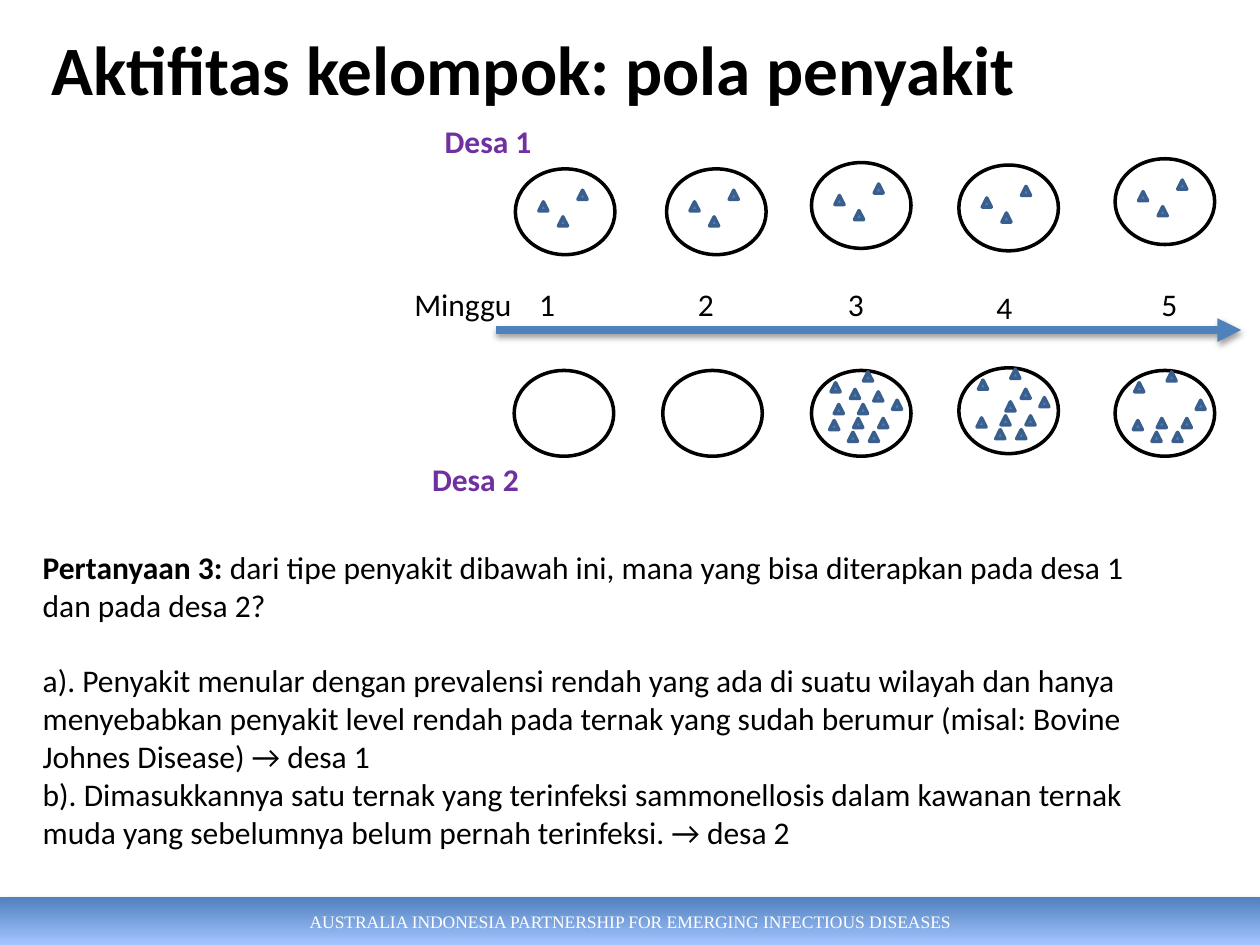
"""Build the slide on disease patterns in two villages."""
from lxml import etree
from pptx import Presentation
from pptx.dml.color import RGBColor
from pptx.enum.shapes import MSO_CONNECTOR, MSO_SHAPE
from pptx.enum.text import MSO_ANCHOR, MSO_AUTO_SIZE, PP_ALIGN
from pptx.oxml.ns import qn
from pptx.util import Pt

OVAL, TRIANGLE, RECTANGLE = MSO_SHAPE.OVAL, MSO_SHAPE.ISOSCELES_TRIANGLE, MSO_SHAPE.RECTANGLE
STRAIGHT = MSO_CONNECTOR.STRAIGHT
MIDDLE, NO_AUTOFIT = MSO_ANCHOR.MIDDLE, MSO_AUTO_SIZE.NONE
LEFT, CENTER = PP_ALIGN.LEFT, PP_ALIGN.CENTER

BLACK, WHITE, BLUE, DARK_BLUE, PURPLE = "000000", "FFFFFF", "4F81BD", "3A5F8C", "7030A0"
HERD_WIDTH, HERD_HEIGHT, CASE_SIZE = 56.9, 49, 5.2
NUMBER_WIDTH, WEEK_WIDTH, VILLAGE_WIDTH = 23.8, 72, 66

STABLE_CASES = [(13.4, 18.8), (24.6, 27.4), (35.8, 12.2)]
OUTBREAK_CASES = [
    (24.1, 27.4), (38.4, 27.4), (33.1, 35.3), (10.4, 28.6),
    (11.2, 7), (29.7, 0.8), (46.3, 17), (21.1, 35.3),
    (35.6, 12.2), (26.9, 19.4), (13, 19.4), (22.3, 10.8),
]
VILLAGE_1 = [
    (left, top, STABLE_CASES)
    for left, top in [(294.5, 96.5), (380.9, 96.5), (463.7, 92.9), (547.9, 94.3), (637.2, 90.7)]
]
VILLAGE_2 = [
    (293.8, 211.7, []),
    (378.7, 211.7, []),
    (463.7, 211.7, OUTBREAK_CASES),
    (547.9, 210.2, OUTBREAK_CASES[:10]),
    (637.2, 211.7, OUTBREAK_CASES[:8]),
]
WEEK_NUMBERS = [
    ("1", 301, 159.1), ("2", 391.7, 159.1), ("3", 477.4, 159.1),
    ("4", 562.3, 161.3), ("5", 656.6, 159.1),
]
VILLAGE_LABELS = [("Desa 1", 247, 66.2), ("Desa 2", 239.8, 259.2)]
QUESTION = (
    "Pertanyaan 3: ",
    "dari tipe penyakit dibawah ini, mana yang bisa diterapkan pada desa 1 dan pada desa 2?",
)
ANSWERS = [
    "a). Penyakit menular dengan prevalensi rendah yang ada di suatu wilayah dan hanya "
    "menyebabkan penyakit level rendah pada ternak yang sudah berumur (misal: Bovine "
    "Johnes Disease) → desa 1",
    "b). Dimasukkannya satu ternak yang terinfeksi sammonellosis dalam kawanan ternak "
    "muda yang sebelumnya belum pernah terinfeksi. → desa 2",
]


def rgb(value):
    """Return the colour for a hex string."""
    return RGBColor.from_string(value)


def format_font(font, size, color=BLACK, bold=False, name="Calibri"):
    """Set the face, size, weight and colour of a font."""
    font.name, font.size, font.bold = name, Pt(size), bold
    font.color.rgb = rgb(color)


def add_shadow(shape, opacity, distance):
    """Give a shape or connector a soft shadow straight below it."""
    effects = etree.SubElement(shape._element.spPr, qn("a:effectLst"))
    shadow = etree.SubElement(
        effects, qn("a:outerShdw"), blurRad=str(Pt(3.1)), dist=str(Pt(distance)),
        dir="5400000", rotWithShape="0",
    )
    color = etree.SubElement(shadow, qn("a:srgbClr"), val=BLACK)
    etree.SubElement(color, qn("a:alpha"), val=str(opacity * 1000))


def add_title(slide, text):
    """Place and format the slide title."""
    title = slide.shapes.title
    title.left, title.top, title.width, title.height = Pt(22.3), Pt(10.8), Pt(648), Pt(55.4)
    frame = title.text_frame
    frame.text = text
    frame.auto_size, frame.vertical_anchor = NO_AUTOFIT, MIDDLE
    frame.paragraphs[0].alignment = LEFT
    format_font(frame.paragraphs[0].runs[0].font, 39.6, bold=True)


def add_footer(slide, text):
    """Add the gradient band along the bottom edge."""
    band = slide.shapes.add_shape(RECTANGLE, 0, Pt(512.6), Pt(720), Pt(27.4))
    band.fill.gradient()
    band.fill.gradient_angle = 270
    for stop, color in zip(band.fill.gradient_stops, (BLUE, "A4C4FF")):
        stop.color.rgb = rgb(color)
    band.line.fill.background()
    add_shadow(band, 35, 1.8)
    frame = band.text_frame
    frame.text = text
    frame.vertical_anchor = MIDDLE
    frame.paragraphs[0].alignment = CENTER
    format_font(frame.paragraphs[0].runs[0].font, 10, WHITE, name="Times New Roman")


def add_label(slide, text, left, top, width, color=BLACK, bold=False):
    """Add a short one-line label."""
    box = slide.shapes.add_textbox(Pt(left), Pt(top), Pt(width), Pt(29))
    box.text_frame.word_wrap = False
    box.text_frame.text = text
    format_font(box.text_frame.paragraphs[0].runs[0].font, 18, color, bold)


def add_outlined(slide, kind, left, top, width, height, fill, line):
    """Add a filled shape with a two-point outline."""
    shape = slide.shapes.add_shape(kind, Pt(left), Pt(top), Pt(width), Pt(height))
    shape.shadow.inherit = False
    shape.fill.solid()
    shape.fill.fore_color.rgb = rgb(fill)
    shape.line.color.rgb = rgb(line)
    shape.line.width = Pt(2)


def add_herd(slide, left, top, cases):
    """Add a herd circle with its cases as triangles."""
    add_outlined(slide, OVAL, left, top, HERD_WIDTH, HERD_HEIGHT, WHITE, BLACK)
    for x, y in cases:
        add_outlined(slide, TRIANGLE, left + x, top + y, CASE_SIZE, CASE_SIZE, BLUE, DARK_BLUE)


def add_timeline(slide):
    """Add the arrow that runs through the weeks."""
    arrow = slide.shapes.add_connector(STRAIGHT, Pt(283.6), Pt(188.6), Pt(709.2), Pt(188.6))
    arrow.line.color.rgb = rgb(BLUE)
    arrow.line.width = Pt(4.5)
    etree.SubElement(arrow._element.spPr.get_or_add_ln(), qn("a:tailEnd"), type="triangle")
    add_shadow(arrow, 38, 1.6)


def add_question(slide):
    """Add the question and its two answers."""
    box = slide.shapes.add_textbox(Pt(17.3), Pt(309.6), Pt(654.5), Pt(181.4))
    frame = box.text_frame
    frame.word_wrap = True
    for index, text in enumerate(QUESTION):
        run = frame.paragraphs[0].add_run()
        run.text = text
        format_font(run.font, 18, bold=index == 0)
    for answer in ANSWERS:
        paragraph = frame.add_paragraph()
        paragraph.text = answer
        format_font(paragraph.runs[0].font, 18)
    frame.paragraphs[1].space_before = Pt(21.6)


def main():
    """Build and save the presentation."""
    presentation = Presentation()
    presentation.slide_width, presentation.slide_height = Pt(720), Pt(540)
    slide = presentation.slides.add_slide(presentation.slide_layouts[5])
    add_footer(slide, "AUSTRALIA INDONESIA PARTNERSHIP FOR EMERGING INFECTIOUS DISEASES")
    add_title(slide, "Aktifitas kelompok: pola penyakit")
    add_timeline(slide)
    add_label(slide, "Minggu", 229.7, 159.1, WEEK_WIDTH)
    for label in WEEK_NUMBERS:
        add_label(slide, *label, NUMBER_WIDTH)
    for label in VILLAGE_LABELS:
        add_label(slide, *label, VILLAGE_WIDTH, color=PURPLE, bold=True)
    for herd in VILLAGE_1 + VILLAGE_2:
        add_herd(slide, *herd)
    add_question(slide)
    presentation.save("out.pptx")


if __name__ == "__main__":
    main()
